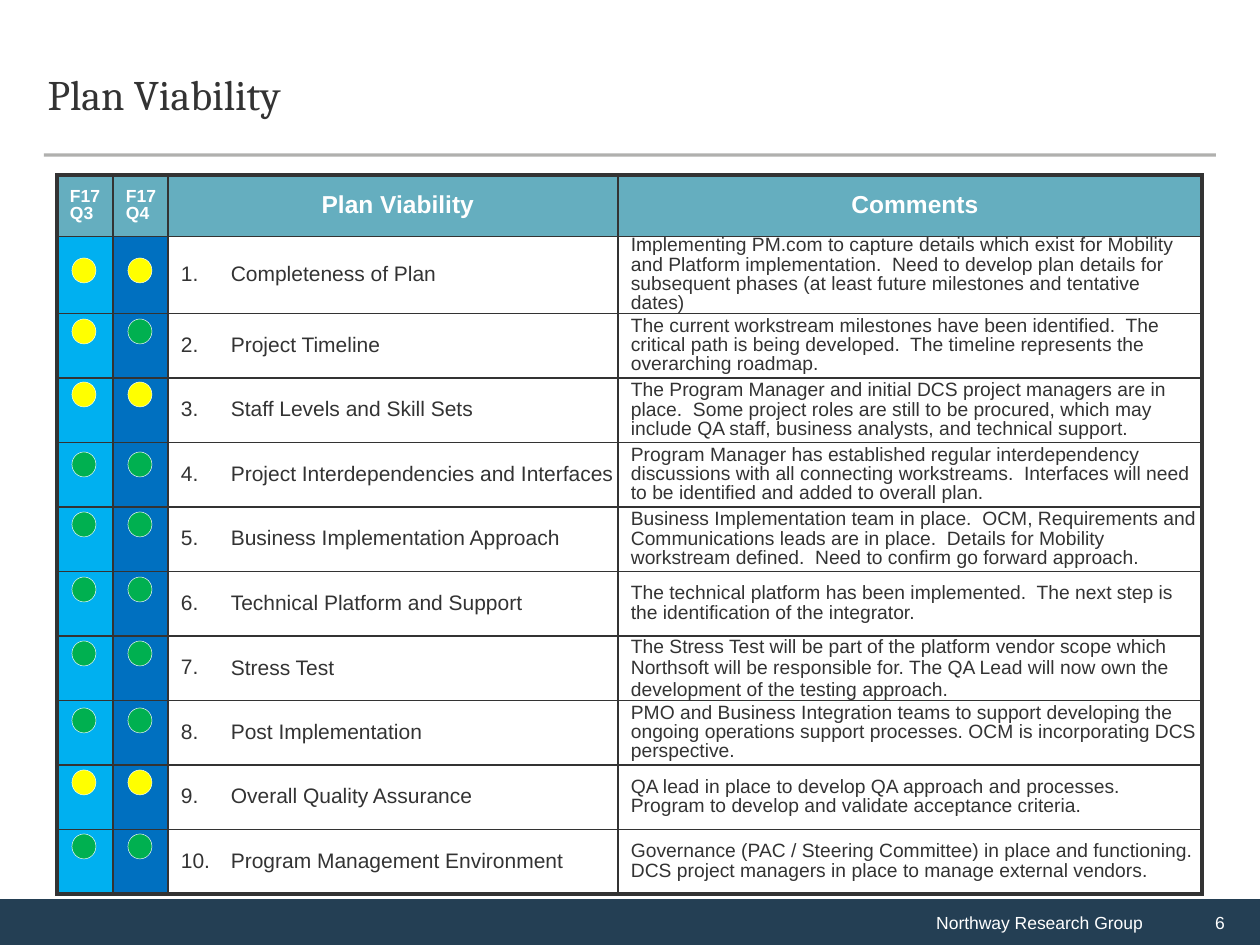
"""Build the Plan Viability status slide."""
from lxml.etree import SubElement
from pptx import Presentation
from pptx.dml.color import RGBColor
from pptx.enum.shapes import MSO_CONNECTOR, MSO_SHAPE
from pptx.enum.text import MSO_ANCHOR, PP_ALIGN
from pptx.oxml.ns import qn
from pptx.util import Emu, Pt

EMU_PER_PX = 914400 / 126
COLORS = {
    "ink": "333333", "white": "FFFFFF", "header": "65AEBF", "footer": "243F54",
    "rule": "45433E", "q3": "00B0F0", "q4": "0070C0", "Y": "FFFF00", "G": "00B050",
}
COLUMN_WIDTHS = [56, 55, 50, 400, 584]
TABLE_LEFT, TABLE_TOP, HEADER_HEIGHT, BODY_HEIGHT = 57, 175, 60, 645
DOT_LEFTS = [72, 128]
DOT_TOPS = [258, 319, 382, 452, 512, 577, 641, 708, 770, 834]
SINGLE_SPACED_ROW = 7
CRITERIA = [
    ("YY", "Completeness of Plan",
     "Implementing PM.com to capture details which exist for Mobility and Platform "
     "implementation.  Need to develop plan details for subsequent phases "
     "(at least future milestones and tentative dates)"),
    ("YG", "Project Timeline",
     "The current workstream milestones have been identified.  The critical path is "
     "being developed.  The timeline represents the overarching roadmap."),
    ("YY", "Staff Levels and Skill Sets",
     "The Program Manager and initial DCS project managers are in place.  Some project "
     "roles are still to be procured, which may include QA staff, business analysts, "
     "and technical support."),
    ("GG", "Project Interdependencies and Interfaces",
     "Program Manager has established regular interdependency discussions with all "
     "connecting workstreams.  Interfaces will need to be identified and added to "
     "overall plan."),
    ("GG", "Business Implementation Approach",
     "Business Implementation team in place.  OCM, Requirements and Communications "
     "leads are in place.  Details for Mobility workstream defined.  Need to confirm "
     "go forward approach."),
    ("GG", "Technical Platform and Support",
     "The technical platform has been implemented.  The next step is the "
     "identification of the integrator."),
    ("GG", "Stress Test",
     "The Stress Test will be part of the platform vendor scope which Northsoft will "
     "be responsible for. The QA Lead will now own the development of the testing "
     "approach."),
    ("GG", "Post Implementation",
     "PMO and Business Integration teams to support developing the ongoing operations "
     "support processes. OCM is incorporating DCS perspective."),
    ("YY", "Overall Quality Assurance",
     "QA lead in place to develop QA approach and processes.  Program to develop and "
     "validate acceptance criteria."),
    ("GG", "Program Management Environment",
     "Governance (PAC / Steering Committee) in place and functioning.  DCS project "
     "managers in place to manage external vendors."),
]


def px(length):
    """Turn px into EMU."""
    return Emu(round(length * EMU_PER_PX))


def rgb(name):
    """Look up a colour by its role."""
    return RGBColor.from_string(COLORS[name])


def add_run(paragraph, text, size, color, font="Arial", bold=False):
    """Add one formatted run."""
    run = paragraph.add_run()
    run.text = text
    run.font.size = Pt(size)
    run.font.name = font
    run.font.bold = bold
    run.font.color.rgb = rgb(color)


def add_title(slide, text):
    """Place and format the title placeholder."""
    title = slide.shapes.title
    title.left, title.top, title.width, title.height = map(px, (35, 37, 1188, 118))
    title.text_frame.vertical_anchor = MSO_ANCHOR.MIDDLE
    paragraph = title.text_frame.paragraphs[0]
    paragraph.alignment = PP_ALIGN.LEFT
    paragraph.line_spacing = Pt(26)
    add_run(paragraph, text, 24, "ink", "Cambria")


def add_title_rule(slide):
    """Draw the translucent rule under the title."""
    rule = slide.shapes.add_connector(
        MSO_CONNECTOR.STRAIGHT, px(44), px(155), px(1216), px(155))
    rule.line.width = Pt(1.75)
    rule.line.color.rgb = rgb("rule")
    properties = rule._element.spPr
    color = properties.find(".//" + qn("a:srgbClr"))
    SubElement(color, qn("a:alpha"), val="42000")
    SubElement(properties, qn("a:effectLst"))


def add_footer_part(slide, left, width, text, alignment, indent):
    """Add one filled part of the footer band."""
    part = slide.shapes.add_shape(
        MSO_SHAPE.RECTANGLE, px(left), px(899), px(width), px(46))
    part.shadow.inherit = False
    part.fill.solid()
    part.fill.fore_color.rgb = rgb("footer")
    part.line.fill.background()
    part.text_frame.word_wrap = True
    part.text_frame.vertical_anchor = MSO_ANCHOR.MIDDLE
    paragraph = part.text_frame.paragraphs[0]
    paragraph.alignment = alignment
    paragraph._p.get_or_add_pPr().set("marL", str(px(indent)))
    add_run(paragraph, text, 10, "white")


def set_borders(cell, widths):
    """Set left, right, top and bottom borders; a zero width hides one."""
    properties = cell._tc.get_or_add_tcPr()
    for side, width in zip("LRTB", widths):
        border = SubElement(properties, qn(f"a:ln{side}"), w=str(Pt(width)))
        if width:
            fill = SubElement(border, qn("a:solidFill"))
            SubElement(fill, qn("a:srgbClr"), val=COLORS["ink"])
        else:
            SubElement(border, qn("a:noFill"))


def format_cell(cell, row, column):
    """Give a cell its borders, fill, insets and anchor."""
    set_borders(cell, (
        2.25 if column == 0 else 0 if row and column == 3 else 1,
        2.25 if column == 4 else 0 if row and column == 2 else 1,
        2.25 if row == 0 else 1,
        2.25 if row == len(CRITERIA) else 1))
    fill_name = "header" if row == 0 else {0: "q3", 1: "q4"}.get(column)
    if fill_name:
        cell.fill.solid()
        cell.fill.fore_color.rgb = rgb(fill_name)
    else:
        cell.fill.background()
    cell.vertical_anchor = MSO_ANCHOR.MIDDLE
    cell.margin_left, cell.margin_right = px(13), px(3)
    cell.margin_top = cell.margin_bottom = px(0 if row else 13)


def write_cell(cell, lines, size, color="ink", bold=False, alignment=None, spacing=0.9):
    """Write lines of text in a cell."""
    paragraph = cell.text_frame.paragraphs[0]
    paragraph.alignment = alignment
    paragraph.line_spacing = spacing
    for index, line in enumerate(lines):
        if index:
            paragraph.add_line_break()
        add_run(paragraph, line, size, color, bold=bold)


def add_viability_table(slide):
    """Add the table of criteria and comments."""
    count = len(CRITERIA)
    table = slide.shapes.add_table(
        count + 1, len(COLUMN_WIDTHS), px(TABLE_LEFT), px(TABLE_TOP),
        px(sum(COLUMN_WIDTHS)), px(HEADER_HEIGHT + BODY_HEIGHT)).table
    table.first_row = table.horz_banding = False
    for column, width in enumerate(COLUMN_WIDTHS):
        table.columns[column].width = px(width)
    for row in range(count + 1):
        table.rows[row].height = px(BODY_HEIGHT / count if row else HEADER_HEIGHT)
        for column in range(len(COLUMN_WIDTHS)):
            format_cell(table.cell(row, column), row, column)
    table.cell(0, 2).merge(table.cell(0, 3))
    write_cell(table.cell(0, 0), ["F17 Q3"], 10, "white", True)
    write_cell(table.cell(0, 1), ["F17", "Q4"], 10, "white", True)
    for column, heading in ((2, "Plan Viability"), (4, "Comments")):
        write_cell(table.cell(0, column), [heading], 14, "white", True, PP_ALIGN.CENTER)
    for row, (_, criterion, comment) in enumerate(CRITERIA, 1):
        spacing = 1.0 if row == SINGLE_SPACED_ROW else 0.9
        write_cell(table.cell(row, 2), [f"{row}."], 12)
        write_cell(table.cell(row, 3), [criterion], 12, spacing=spacing)
        write_cell(table.cell(row, 4), [comment], 11, spacing=spacing)


def add_status_dots(slide, quarter):
    """Add one quarter's group of status dots."""
    group = slide.shapes.add_group_shape()
    for top, (statuses, _, _) in zip(DOT_TOPS, CRITERIA):
        dot = group.shapes.add_shape(
            MSO_SHAPE.OVAL, px(DOT_LEFTS[quarter]), px(top), px(24), px(25))
        dot.shadow.inherit = False
        dot.fill.solid()
        dot.fill.fore_color.rgb = rgb(statuses[quarter])
        dot.line.color.rgb = rgb("white")
        dot.line.width = Pt(0.25)


def main():
    """Build and save the slide."""
    deck = Presentation()
    deck.slide_width, deck.slide_height = px(1260), px(945)
    slide = deck.slides.add_slide(deck.slide_layouts[5])
    add_footer_part(slide, 0, 1155, "Northway Research Group", PP_ALIGN.RIGHT, 37)
    add_footer_part(slide, 1155, 105, "6", PP_ALIGN.CENTER, 25)
    add_title_rule(slide)
    add_title(slide, "Plan Viability")
    add_viability_table(slide)
    for quarter in range(len(DOT_LEFTS)):
        add_status_dots(slide, quarter)
    deck.save("out.pptx")


if __name__ == "__main__":
    main()
